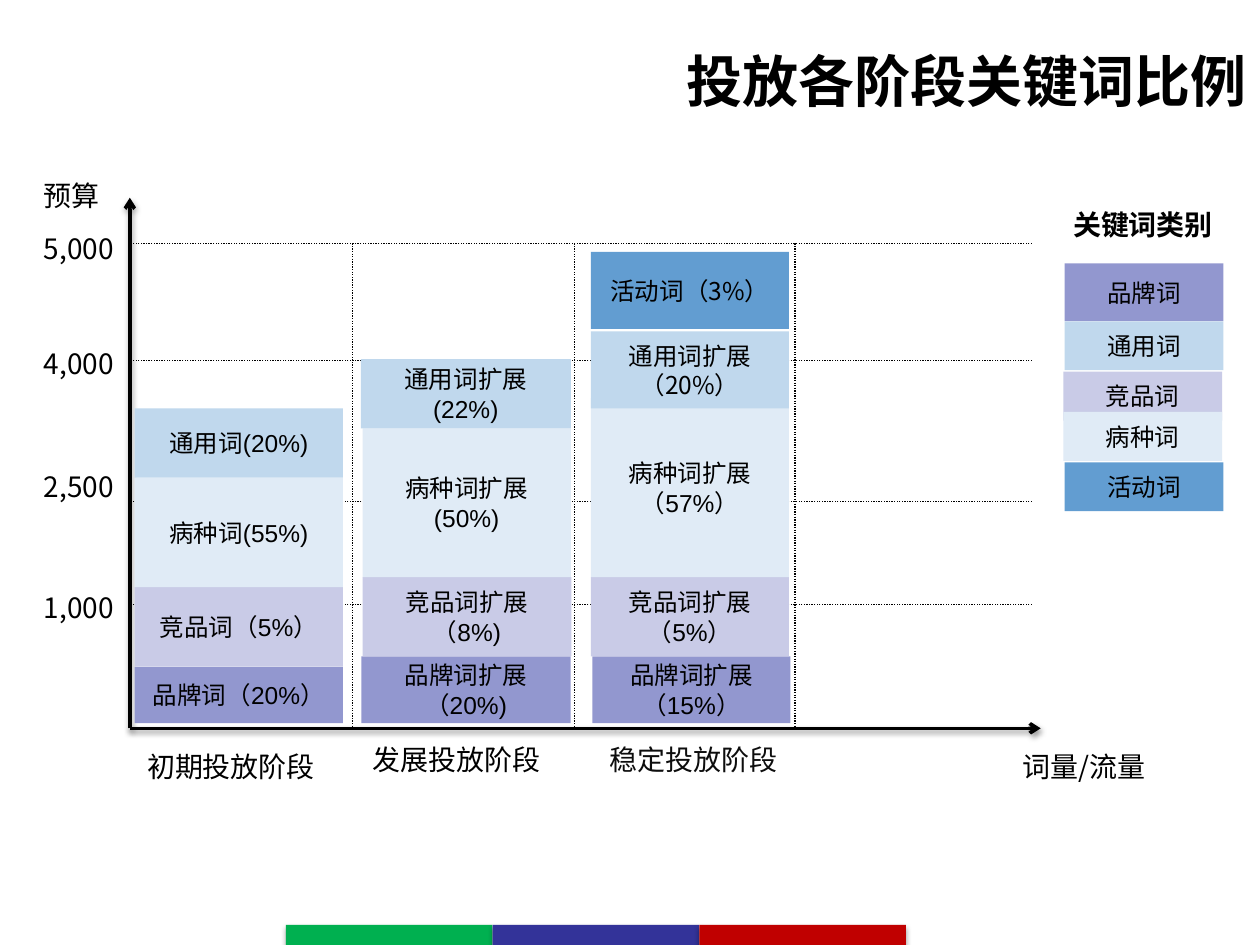
import pptx
import pptx.util
import pptx.dml.color
import pptx.enum.dml
import pptx.enum.shapes
import pptx.enum.text
import pptx.oxml
import pptx.oxml.ns
import lxml.etree

Pt = pptx.util.Pt
RGB = pptx.dml.color.RGBColor.from_string
ALIGN = pptx.enum.text.PP_ALIGN
MIDDLE = pptx.enum.text.MSO_ANCHOR.MIDDLE
SHAPE = pptx.enum.shapes.MSO_SHAPE
CJK = "Noto Sans CJK SC"
LATIN = "Arial"

COLORS = {
    "text": "000000", "soft": "0D0D0D",
    "brand": "9297CF", "rival": "C9CBE7", "illness": "E0EBF6",
    "general": "C0D8ED", "event": "629DD1",
    "green": "00B050", "blue": "333399", "red": "C00000",
}

# Axes and grid
LEFT, BASE, TOP, RIGHT = 74.2, 416.2, 113, 594.7
GRID_TOP, GRID_RIGHT = 139, 589.7
STAGES = [201.6, 328.3, 454.3]
# label, line height, label top
LEVELS = [("5,000", 139, 129), ("4,000", 206, 194.5),
          ("2,500", 286.5, 265), ("1,000", 345.5, 334)]

# text, left, top, width, colour
LABELS = [
    ("预算", 18, 98.6, 51, "text"),
    ("词量/流量", 577.5, 425, 102, "text"),
    ("初期投放阶段", 77, 425, 118, "text"),
    ("发展投放阶段", 206, 421, 112.3, "text"),
    ("稳定投放阶段", 341.3, 421, 118, "soft"),
]

# kind, text, left, top, width, height, font; each stack runs upwards
BLOCKS = [
    ("brand", "品牌词（20%）", 77, 381, 119, 32.3, LATIN),
    ("rival", "竞品词（5%）", 77, 335.5, 119, 45.5, LATIN),
    ("illness", "病种词(55%)", 77, 273, 119, 62.5, LATIN),
    ("general", "通用词(20%)", 77, 233.3, 119, 39.7, LATIN),

    ("brand", "品牌词扩展（20%)", 206.6, 375.1, 119.5, 38.2, LATIN),
    ("rival", "竞品词扩展（8%)", 207.2, 329.8, 119.3, 45.3, LATIN),
    ("illness", "病种词扩展(50%)", 207.2, 244.8, 119, 85, LATIN),
    ("general", "通用词扩展 (22%)", 206.2, 205.2, 120, 39.6, LATIN),

    ("brand", "品牌词扩展（15%）", 338.5, 375.1, 113.2, 38.2, LATIN),
    ("rival", "竞品词扩展（5%）", 337.7, 329.8, 113.2, 45.3, LATIN),
    ("illness", "病种词扩展（57%）", 337.7, 227.5, 113.2, 102.3, LATIN),
    ("general", "通用词扩展（20%）", 337.7, 189.4, 113.2, 44, CJK),
    ("event", "活动词（3%）", 337.7, 144, 113.2, 44, CJK),
]

LEGEND = [
    ("brand", "品牌词", 608.4, 150.5, 33),
    ("general", "通用词", 608.4, 183.6, 28),
    ("rival", "竞品词", 607.7, 212.4, 28),
    ("illness", "病种词", 607.7, 235.4, 28),
    ("event", "活动词", 608.4, 264.2, 28),
]


def write(frame, text, size, font=CJK, color="text", bold=False, align=ALIGN.LEFT):
    frame.word_wrap = True
    frame.text = text
    para = frame.paragraphs[0]
    para.alignment = align
    run = para.runs[0]
    run.font.size = Pt(size)
    run.font.bold = bold
    run.font.color.rgb = RGB(COLORS[color])
    run.font.name = font
    east = lxml.etree.SubElement(run.font._element, pptx.oxml.ns.qn("a:ea"))
    east.set("typeface", CJK)


def shade(item, alpha=0, dist=0):
    """Give an item its own effect list, with a downward shadow if alpha is set."""
    xml = f'<a:effectLst {pptx.oxml.ns.nsdecls("a")}>'
    if alpha:
        xml += (f'<a:outerShdw blurRad="{Pt(3.1)}" dist="{Pt(dist)}" dir="5400000" '
                f'rotWithShape="0"><a:srgbClr val="{COLORS["text"]}">'
                f'<a:alpha val="{alpha * 1000}"/></a:srgbClr></a:outerShdw>')
    item._element.spPr.append(pptx.oxml.parse_xml(xml + "</a:effectLst>"))


def label(slide, text, left, top, width, color="text", bold=False):
    box = slide.shapes.add_textbox(Pt(left), Pt(top), Pt(width), Pt(26.6))
    write(box.text_frame, text, 16, color=color, bold=bold)


def block(slide, color, left, top, width, height):
    rect = slide.shapes.add_shape(SHAPE.RECTANGLE, Pt(left), Pt(top), Pt(width), Pt(height))
    rect.fill.solid()
    rect.fill.fore_color.rgb = RGB(COLORS[color])
    rect.line.fill.background()
    return rect


def word(slide, kind, text, left, top, width, height, font=CJK):
    rect = block(slide, kind, left, top, width, height)
    shade(rect)
    rect.text_frame.vertical_anchor = MIDDLE
    write(rect.text_frame, text, 14, font, align=ALIGN.CENTER)


def rule(slide, x1, y1, x2, y2, width):
    kind = pptx.enum.shapes.MSO_CONNECTOR.STRAIGHT
    line = slide.shapes.add_connector(kind, Pt(x1), Pt(y1), Pt(x2), Pt(y2))
    line.line.color.rgb = RGB(COLORS["text"])
    line.line.width = Pt(width)
    return line


def dots(slide, *ends):
    line = rule(slide, *ends, 0.75)
    line.line.dash_style = pptx.enum.dml.MSO_LINE.ROUND_DOT
    shade(line)


def axis(slide, *ends):
    line = rule(slide, *ends, 2)
    tip = lxml.etree.SubElement(line.line._get_or_add_ln(), pptx.oxml.ns.qn("a:tailEnd"))
    tip.set("type", "arrow")
    shade(line, 38, 1.6)


def main():
    deck = pptx.Presentation()
    deck.slide_width, deck.slide_height = Pt(720), Pt(540)
    slide = deck.slides.add_slide(deck.slide_layouts[5])

    # Title
    title = slide.shapes.title
    title.left, title.top, title.width, title.height = Pt(373), Pt(23), Pt(347), Pt(46)
    title.text_frame.vertical_anchor = MIDDLE
    write(title.text_frame, "投放各阶段关键词比例", 32, bold=True, align=ALIGN.RIGHT)

    # Axes, grid and labels
    for text, height, top in LEVELS:
        dots(slide, GRID_RIGHT, height, LEFT, height)
        label(slide, text, 18, top, 65.5)
    for stage in STAGES:
        dots(slide, stage, GRID_TOP, stage, BASE)
    axis(slide, LEFT, BASE, RIGHT, BASE)
    axis(slide, LEFT, BASE, LEFT, TOP)
    for item in LABELS:
        label(slide, *item)

    # Stacks of keyword types
    for item in BLOCKS:
        word(slide, *item)

    # Legend
    label(slide, "关键词类别", 606.2, 115.2, 108, bold=True)
    for kind, text, left, top, height in LEGEND:
        word(slide, kind, text, left, top, 90.7, height)

    # Footer stripe
    for place, color in enumerate(("green", "blue", "red")):
        shade(block(slide, color, 163.4 + place * 118.1, 528.5, 118.1, 11.5), 35, 1.8)

    deck.save("out.pptx")


if __name__ == "__main__":
    main()
